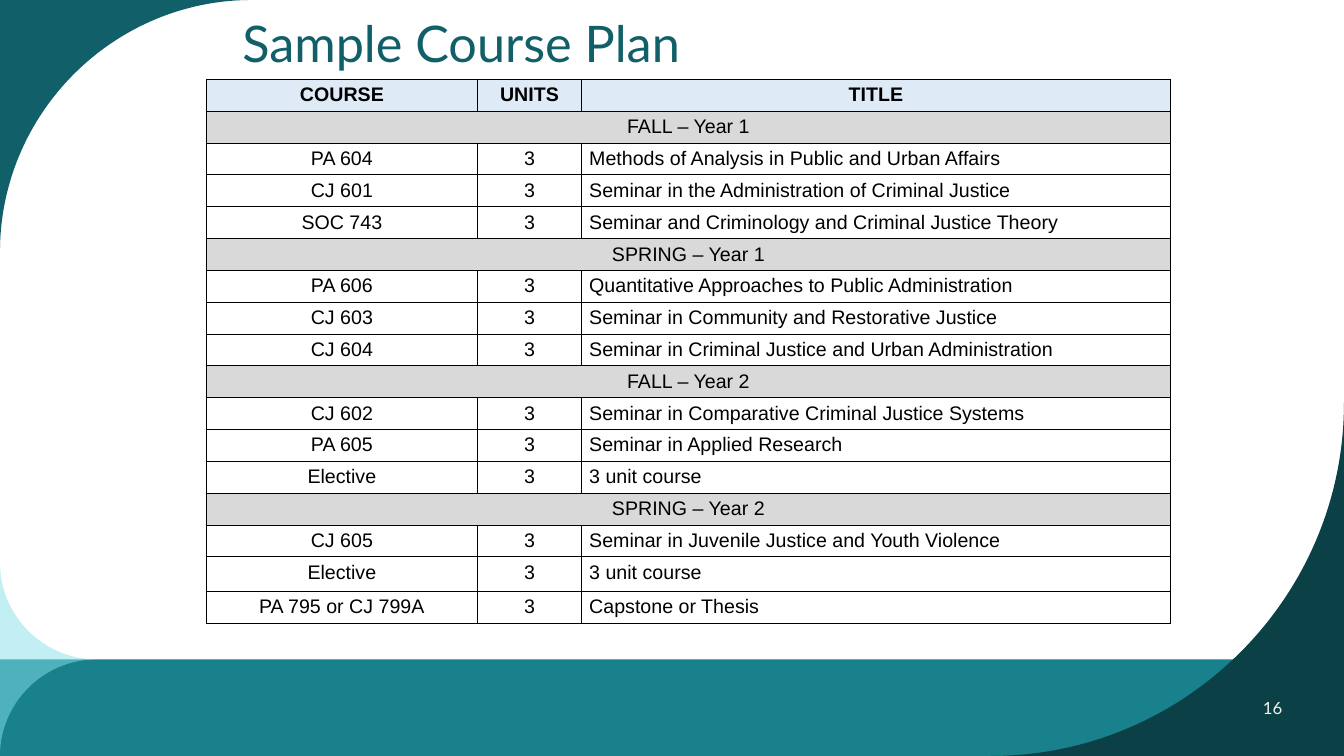
from lxml.etree import SubElement
from pptx import Presentation
from pptx.dml.color import RGBColor
from pptx.enum.shapes import MSO_SHAPE
from pptx.enum.text import MSO_ANCHOR, PP_ALIGN
from pptx.oxml.ns import qn
from pptx.util import Pt

WIDTH, HEIGHT = 960, 540
BAND_TOP = 471
ROUNDNESS = 0.55  # pull of a quarter circle's handles towards its corner

TEAL = RGBColor(0x18, 0x81, 0x8C)
DARK_TEAL = RGBColor(0x0B, 0x40, 0x46)
DEEP_TEAL = RGBColor(0x11, 0x60, 0x69)
AQUA = RGBColor(0x87, 0xE1, 0xEB)
CREAM = RGBColor(0xF4, 0xF2, 0xEC)
BLACK = RGBColor(0, 0, 0)
HEADER_BLUE = RGBColor(0xDE, 0xEA, 0xF6)
TERM_GRAY = RGBColor(0xD9, 0xD9, 0xD9)

HEADINGS = ("COURSE", "UNITS", "TITLE")
TERMS = {
    "FALL – Year 1": [
        ("PA 604", "Methods of Analysis in Public and Urban Affairs"),
        ("CJ 601", "Seminar in the Administration of Criminal Justice"),
        ("SOC 743", "Seminar and Criminology and Criminal Justice Theory"),
    ],
    "SPRING – Year 1": [
        ("PA 606", "Quantitative Approaches to Public Administration"),
        ("CJ 603", "Seminar in Community and Restorative Justice"),
        ("CJ 604", "Seminar in Criminal Justice and Urban Administration"),
    ],
    "FALL – Year 2": [
        ("CJ 602", "Seminar in Comparative Criminal Justice Systems"),
        ("PA 605", "Seminar in Applied Research"),
        ("Elective", "3 unit course"),
    ],
    "SPRING – Year 2": [
        ("CJ 605", "Seminar in Juvenile Justice and Youth Violence"),
        ("Elective", "3 unit course"),
        ("PA 795 or CJ 799A", "Capstone or Thesis"),
    ],
}
UNITS = "3"
COLUMN_WIDTHS = (193.5, 74.5, 420.5)
ROW_HEIGHT = 22.75
TALL_ROW, TALL_HEIGHT = 15, 24.5


def paint(shape, color):
    shape.shadow.inherit = False
    shape.fill.solid()
    shape.fill.fore_color.rgb = color
    shape.line.fill.background()


def quarter(start, corner, end):
    """Curve from start to end that bends towards the corner."""
    handles = [tuple(p + (c - p) * ROUNDNESS for p, c in zip(point, corner))
               for point in (start, end)]
    return [*handles, end]


def add_outline(page, start, segments, color):
    """Segments hold one point for a line and three for a curve."""
    builder = page.shapes.build_freeform(Pt(start[0]), Pt(start[1]))
    builder.add_line_segments(
        [(Pt(x), Pt(y)) for segment in segments for x, y in segment])
    shape = builder.convert_to_shape()
    steps = iter(list(shape._element.iter(qn("a:lnTo"))))
    for segment in segments:
        first, *others = [next(steps) for _ in segment]
        for other in others:
            first.tag = qn("a:cubicBezTo")
            first.append(other[0])
            other.getparent().remove(other)
    paint(shape, color)
    return shape


def set_opacity(shape, percent):
    color = shape.fill._xPr.find(qn("a:solidFill"))[0]
    SubElement(color, qn("a:alpha")).set("val", str(percent * 1000))


def style(paragraph, font_name, size, color, align, bold=False):
    paragraph.alignment = align
    font = paragraph.font
    font.name, font.size, font.bold = font_name, Pt(size), bold
    font.color.rgb = color


def add_text(page, text, left, top, width, height, size, color, align):
    box = page.shapes.add_textbox(Pt(left), Pt(top), Pt(width), Pt(height))
    frame = box.text_frame
    frame.word_wrap = True
    frame.vertical_anchor = MSO_ANCHOR.MIDDLE
    paragraph = frame.paragraphs[0]
    paragraph.text = text
    style(paragraph, "Lato", size, color, align)
    return paragraph


def format_cell(cell, fill):
    cell.margin_left = cell.margin_right = Pt(5.4)
    cell.margin_top, cell.margin_bottom = Pt(3.3), Pt(2)
    properties = cell._tc.get_or_add_tcPr()
    for side in ("a:lnL", "a:lnR", "a:lnT", "a:lnB"):
        line = SubElement(properties, qn(side), w=str(Pt(0.75)))
        line_fill = SubElement(line, qn("a:solidFill"))
        SubElement(line_fill, qn("a:srgbClr"), val=str(BLACK))
    if fill is None:
        cell.fill.background()
    else:
        cell.fill.solid()
        cell.fill.fore_color.rgb = fill


def write_cell(cell, text, align, bold):
    paragraph = cell.text_frame.paragraphs[0]
    paragraph.text = text
    style(paragraph, "Arial", 14, BLACK, align, bold)


def add_background(page):
    # Bottom band
    radius = HEIGHT - BAND_TOP
    band = page.shapes.add_shape(
        MSO_SHAPE.RECTANGLE, 0, Pt(BAND_TOP), Pt(WIDTH), Pt(radius))
    paint(band, TEAL)
    # Large corners
    corners = [((WIDTH, HEIGHT), -252, DARK_TEAL), ((0, 0), 180, DEEP_TEAL)]
    for (x, y), reach, color in corners:
        start, end = (x, y + reach), (x + reach, y)
        add_outline(page, start, [quarter(start, (x, y), end), [(x, y)]], color)
    # Pale flare on the left edge
    top, tip, bottom = (0, BAND_TOP - radius), (radius, BAND_TOP), (0, HEIGHT)
    bend = (0, BAND_TOP)
    flare = add_outline(
        page, top, [quarter(top, bend, tip), quarter(tip, bend, bottom)], AQUA)
    set_opacity(flare, 50)


def add_course_table(page):
    rows = [HEADINGS]
    for term, courses in TERMS.items():
        rows.append((term,))
        rows += [(course, UNITS, title) for course, title in courses]

    height = ROW_HEIGHT * (len(rows) - 1) + TALL_HEIGHT
    frame = page.shapes.add_table(
        len(rows), len(HEADINGS), Pt(147.5), Pt(56.75),
        Pt(sum(COLUMN_WIDTHS)), Pt(height))
    table = frame.table
    table.first_row = table.horz_banding = False
    for column, width in zip(table.columns, COLUMN_WIDTHS):
        column.width = Pt(width)

    for index, values in enumerate(rows):
        table.rows[index].height = Pt(TALL_HEIGHT if index == TALL_ROW else ROW_HEIGHT)
        cells = list(table.rows[index].cells)
        is_header, is_term = index == 0, len(values) == 1
        fill = HEADER_BLUE if is_header else TERM_GRAY if is_term else None
        if is_term:
            cells[0].merge(cells[-1])
        for cell in cells:
            format_cell(cell, fill)
        for number, (cell, text) in enumerate(zip(cells, values)):
            is_title = number == 2 and not is_header
            align = PP_ALIGN.LEFT if is_title else PP_ALIGN.CENTER
            write_cell(cell, text, align, is_header)


def main():
    deck = Presentation()
    deck.slide_width, deck.slide_height = Pt(WIDTH), Pt(HEIGHT)
    page = deck.slides.add_slide(deck.slide_layouts[6])

    add_background(page)
    # Title and page number
    title = add_text(page, "Sample Course Plan", 166, -10, 721.5, 85.5,
                     36, DEEP_TEAL, PP_ALIGN.LEFT)
    title.line_spacing = 0.9
    add_text(page, "16", 858, BAND_TOP, 102, HEIGHT - BAND_TOP,
             12, CREAM, PP_ALIGN.CENTER)
    # Course plan
    add_course_table(page)

    deck.save("out.pptx")


if __name__ == "__main__":
    main()
